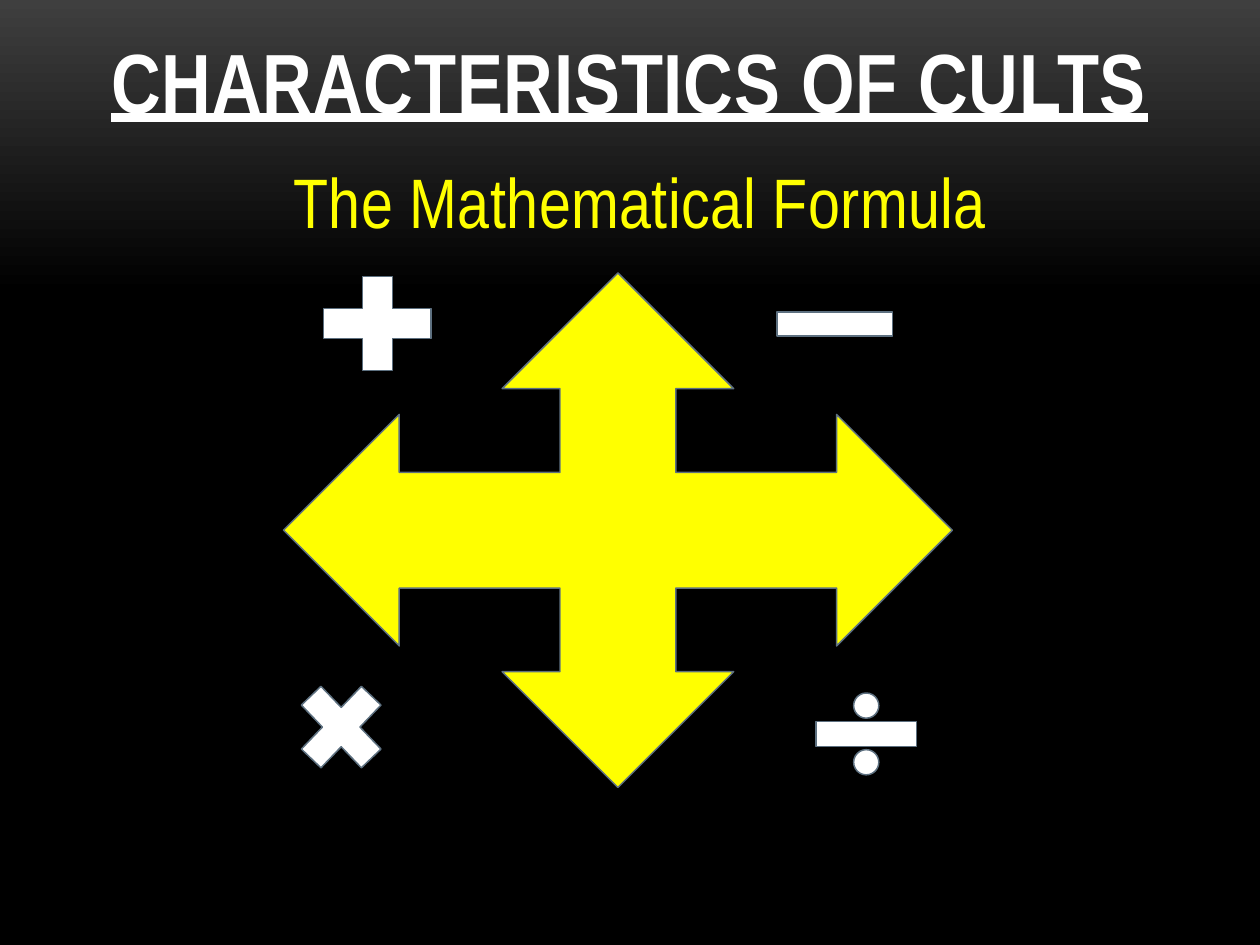
"""Build the slide on the mathematical formula behind the characteristics of cults."""
from dataclasses import dataclass

import pptx
import pptx.dml.color
import pptx.enum.shapes
import pptx.enum.text
import pptx.util

COLUMNS, ROWS = 120, 90
Preset = pptx.enum.shapes.MSO_SHAPE
Anchor = pptx.enum.text.MSO_ANCHOR


@dataclass(frozen=True)
class Theme:
    font: str = "Arial Narrow"
    white: str = "FFFFFF"
    yellow: str = "FFFF00"
    outline: str = "5D7080"
    glow: str = "3F3F3F"
    black: str = "000000"
    glow_end: float = 0.31
    outline_width: float = 0.85
    title_size: int = 48
    subtitle_size: int = 40


@dataclass(frozen=True)
class Area:
    column: float
    row: float
    columns: float
    rows: float


@dataclass(frozen=True)
class Symbol:
    preset: Preset
    area: Area
    color: str


@dataclass(frozen=True)
class Heading:
    text: str
    size: int
    color: str
    tracking: int
    anchor: Anchor
    top_margin: float
    space_after: int = 0
    strong: bool = False


THEME = Theme()
TITLE_AREA = Area(8, 3.6, 104, 9.4)
SUBTITLE_AREA = Area(6, 14, 110, 66)
TITLE = Heading("CHARACTERISTICS OF CULTS", THEME.title_size, THEME.white, 50,
                Anchor.BOTTOM, 0.05, strong=True)
SUBTITLE = Heading("The Mathematical Formula", THEME.subtitle_size, THEME.yellow, 30,
                   Anchor.TOP, 0.09, space_after=6)
SYMBOLS = (
    Symbol(Preset.MATH_PLUS, Area(29, 24.7, 13.9, 12.2), THEME.white),
    Symbol(Preset.MATH_MINUS, Area(72, 26, 15, 9.7), THEME.white),
    Symbol(Preset.MATH_MULTIPLY, Area(27, 63.5, 11, 11.5), THEME.white),
    Symbol(Preset.MATH_DIVIDE, Area(76, 64.8, 13, 10.2), THEME.white),
    Symbol(Preset.QUAD_ARROW, Area(27, 26, 63.7, 49), THEME.yellow),
)


def rgb(color: str) -> pptx.dml.color.RGBColor:
    """Turn a hex string into a colour."""
    return pptx.dml.color.RGBColor.from_string(color)


def place(deck, area: Area) -> tuple[int, int, int, int]:
    """Turn grid units into left, top, width and height."""
    column, row = deck.slide_width / COLUMNS, deck.slide_height / ROWS
    return (round(area.column * column), round(area.row * row),
            round(area.columns * column), round(area.rows * row))


def paint_background(page) -> None:
    """Fade the page from grey at the top into black."""
    fill = page.background.fill
    fill.gradient()
    fill.gradient_angle = 270
    stops = ((0, THEME.glow), (THEME.glow_end, THEME.black))
    for stop, (position, color) in zip(fill.gradient_stops, stops):
        stop.position = position
        stop.color.rgb = rgb(color)


def write_heading(box, heading: Heading) -> None:
    """Write and format one centred line of text."""
    frame = box.text_frame
    frame.text = heading.text
    frame.word_wrap = True
    frame.auto_size = pptx.enum.text.MSO_AUTO_SIZE.NONE
    frame.vertical_anchor = heading.anchor
    frame.margin_top = pptx.util.Inches(heading.top_margin)
    para = frame.paragraphs[0]
    para.alignment = pptx.enum.text.PP_ALIGN.CENTER
    para.space_after = pptx.util.Pt(heading.space_after)
    span = para.runs[0]
    span.font.name = THEME.font
    span.font.size = pptx.util.Pt(heading.size)
    span.font.color.rgb = rgb(heading.color)
    span.font.bold = span.font.underline = heading.strong
    span.font._element.set("spc", str(heading.tracking))


def draw_symbol(deck, page, symbol: Symbol) -> None:
    """Draw one filled and outlined symbol."""
    shape = page.shapes.add_shape(symbol.preset, *place(deck, symbol.area))
    shape.shadow.inherit = False
    shape.fill.solid()
    shape.fill.fore_color.rgb = rgb(symbol.color)
    shape.line.color.rgb = rgb(THEME.outline)
    shape.line.width = pptx.util.Pt(THEME.outline_width)


def main() -> None:
    """Build and save the deck."""
    deck = pptx.Presentation()
    deck.slide_width, deck.slide_height = pptx.util.Inches(10), pptx.util.Inches(7.5)
    page = deck.slides.add_slide(deck.slide_layouts.get_by_name("Title Only"))
    paint_background(page)
    title = page.shapes.title
    title.left, title.top, title.width, title.height = place(deck, TITLE_AREA)
    write_heading(title, TITLE)
    write_heading(page.shapes.add_textbox(*place(deck, SUBTITLE_AREA)), SUBTITLE)
    for symbol in SYMBOLS:
        draw_symbol(deck, page, symbol)
    deck.save("out.pptx")


if __name__ == "__main__":
    main()
